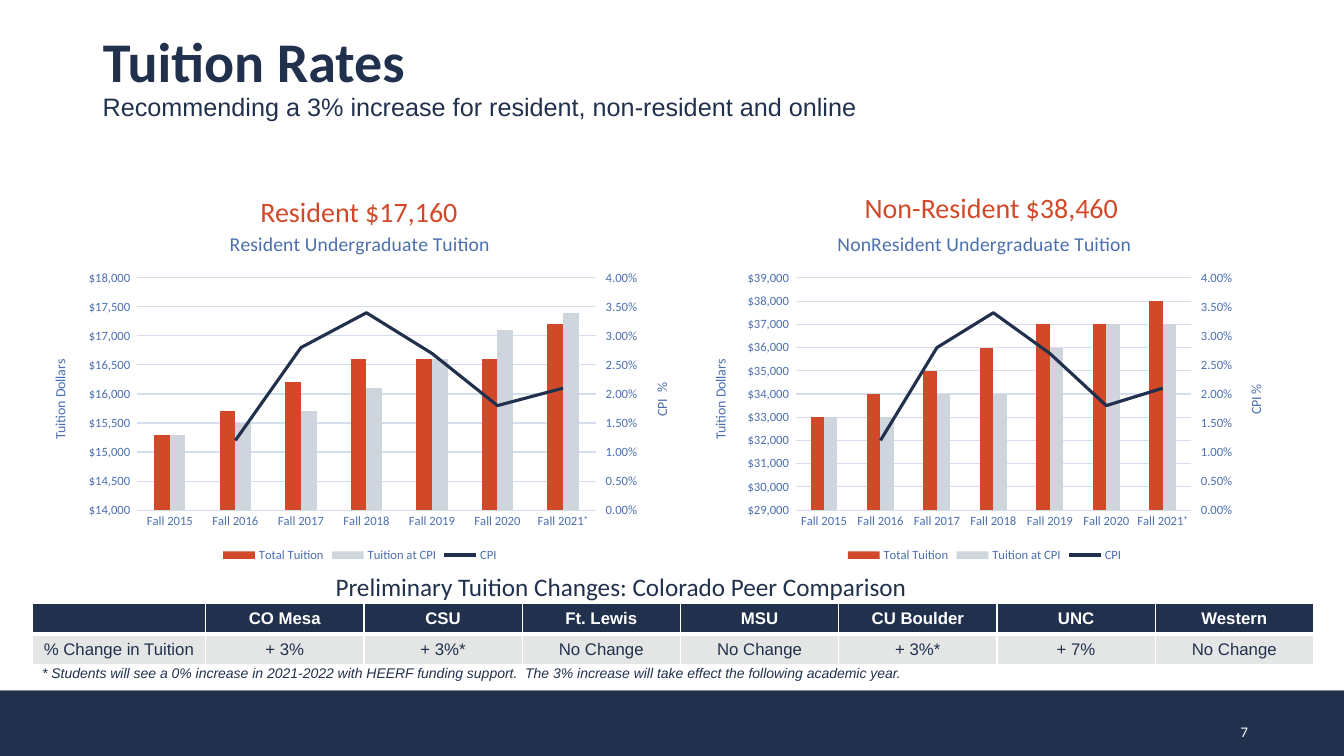
from copy import deepcopy
from dataclasses import dataclass

from pptx import Presentation
from pptx.chart.axis import ValueAxis
from pptx.chart.data import CategoryChartData
from pptx.dml.color import RGBColor
from pptx.enum.chart import XL_CHART_TYPE as ChartType, XL_LEGEND_POSITION as LegendPosition
from pptx.enum.chart import XL_MARKER_STYLE as MarkerStyle, XL_TICK_MARK as TickMark
from pptx.enum.shapes import MSO_SHAPE as ShapeKind
from pptx.enum.text import MSO_ANCHOR as Anchor, PP_ALIGN as Align
from pptx.oxml import parse_xml
from pptx.oxml.ns import nsdecls, qn
from pptx.util import Inches, Pt


@dataclass(frozen=True)
class Theme:
    navy: str = "21314D"
    orange: str = "D2492A"
    silver: str = "CED5DD"
    blue: str = "4B6FAF"
    grid: str = "D5DEED"
    row: str = "E4E5E5"
    edge: str = "848584"
    white: str = "FFFFFF"
    heading_font: str = "Calibri"
    body_font: str = "Arial"
    title: float = 40
    callout: float = 20
    subtitle: float = 18
    chart_title: float = 14
    table: float = 12
    number: float = 10.5
    small: float = 10
    tick: float = 9


THEME = Theme()
WIDTH, HEIGHT = Inches(13.33), Inches(7.5)
DOLLARS = '_("$"* #,##0_)'
TERMS = [f"Fall {year}" for year in range(2015, 2021)] + ["Fall 2021⁺"]
CPI = [None, 0.012, 0.028, 0.034, 0.027, 0.018, 0.021]
PEERS = {"": "% Change in Tuition", "CO Mesa": "+ 3%", "CSU": "+ 3%*", "Ft. Lewis": "No Change",
         "MSU": "No Change", "CU Boulder": "+ 3%*", "UNC": "+ 7%", "Western": "No Change"}


def area(left, top, width, height):
    """Turn percentages of the slide into lengths."""
    return [int(share * side / 100) for share, side in
            zip((left, top, width, height), (WIDTH, HEIGHT, WIDTH, HEIGHT))]


def color(value):
    return RGBColor.from_string(value)


def set_font(font, size, tint=THEME.navy, name=THEME.heading_font, bold=False, italic=False):
    font.size, font.name, font.bold, font.italic = Pt(size), name, bold, italic
    font.color.rgb = color(tint)


def write(frame, text, align=Align.LEFT, anchor=Anchor.TOP, spacing=1.0, **font):
    frame.word_wrap = True
    frame.vertical_anchor = anchor
    paragraph = frame.paragraphs[0]
    paragraph.alignment, paragraph.line_spacing = align, spacing
    run = paragraph.add_run()
    run.text = text
    set_font(run.font, **font)


def add_text(slide, place, text, **style):
    frame = slide.shapes.add_textbox(*area(*place)).text_frame
    write(frame, text, **style)
    return frame


def add_band(slide):
    band = slide.shapes.add_shape(ShapeKind.RECTANGLE, *area(-0.07, 91.33, 100.14, 8.8))
    band.shadow.inherit = False
    band.fill.solid()
    band.fill.fore_color.rgb = color(THEME.navy)
    band.line.color.rgb = color(THEME.edge)
    band.line.width = Pt(1)


def title_chart_part(part, text, size):
    frame = part.text_frame
    frame.text = text
    set_font(frame.paragraphs[0].runs[0].font, size, THEME.blue)


def format_value_axis(element, title, low, high, step, number_format, tick=TickMark.NONE):
    axis = ValueAxis(element)
    axis.minimum_scale, axis.maximum_scale, axis.major_unit = low, high, step
    axis.major_tick_mark, axis.minor_tick_mark = tick, TickMark.NONE
    axis.format.line.fill.background()
    axis.tick_labels.number_format = number_format
    axis.tick_labels.number_format_is_linked = False
    set_font(axis.tick_labels.font, THEME.tick, THEME.blue)
    title_chart_part(axis.axis_title, title, THEME.small)
    body = element.find(f".//{qn('c:title')}//{qn('a:bodyPr')}")
    body.set("rot", "-5400000")
    body.set("vert", "horz")
    return axis


def move_to_right_axis(plot_area):
    """Move the last column series to a line on a second pair of axes."""
    columns = plot_area.find(qn("c:barChart"))
    series = columns.findall(qn("c:ser"))[-1]
    inverted = series.find(qn("c:invertIfNegative"))
    if inverted is not None:
        series.remove(inverted)
    line_chart = parse_xml(
        f'<c:lineChart {nsdecls("c")}><c:grouping val="standard"/><c:varyColors val="0"/>'
        '<c:marker val="1"/><c:axId val="5001"/><c:axId val="5002"/></c:lineChart>')
    line_chart.insert(2, series)
    columns.addnext(line_chart)
    left = plot_area.find(qn("c:valAx"))
    right, categories = deepcopy(left), deepcopy(plot_area.find(qn("c:catAx")))
    for axis, own, other in ((categories, "5001", "5002"), (right, "5002", "5001")):
        axis.find(qn("c:axId")).set("val", own)
        axis.find(qn("c:crossAx")).set("val", other)
    categories.find(qn("c:delete")).set("val", "1")
    right.find(qn("c:axPos")).set("val", "r")
    right.find(qn("c:crosses")).set("val", "max")
    left.addnext(categories)
    categories.addnext(right)
    return left, right


def set_plot_layout(plot_area, **shares):
    for old in plot_area.findall(qn("c:layout")):
        plot_area.remove(old)
    lengths = "".join(f'<c:{key} val="{share}"/>' for key, share in shares.items())
    plot_area.insert(0, parse_xml(
        f'<c:layout {nsdecls("c")}><c:manualLayout><c:layoutTarget val="inner"/>'
        f'<c:xMode val="edge"/><c:yMode val="edge"/>{lengths}</c:manualLayout></c:layout>'))


def add_tuition_chart(slide, place, title, total, at_cpi, scale, cpi_title, plot_x, plot_width):
    data = CategoryChartData(number_format=DOLLARS)
    data.categories = TERMS
    data.add_series("Total Tuition", total)
    data.add_series("Tuition at CPI", at_cpi)
    data.add_series("CPI", CPI, number_format="0.00%")
    chart = slide.shapes.add_chart(ChartType.COLUMN_CLUSTERED, *area(*place), data).chart
    set_font(chart.font, THEME.small)
    chart.has_title = True
    title_chart_part(chart.chart_title, title, THEME.chart_title)
    chart.chart_title.include_in_layout = False
    chart.has_legend = True
    chart.legend.position = LegendPosition.BOTTOM
    chart.legend.include_in_layout = False
    set_font(chart.legend.font, THEME.tick, THEME.blue)

    # Axes
    plot_area = chart.element.find(f".//{qn('c:plotArea')}")
    chart.value_axis.has_major_gridlines = False
    left, right = move_to_right_axis(plot_area)
    set_plot_layout(plot_area, x=plot_x, y=0.18, w=plot_width, h=0.66)
    grid = format_value_axis(left, "Tuition Dollars", *scale, DOLLARS).major_gridlines.format.line
    format_value_axis(right, cpi_title, 0, 0.04, 0.005, "0.00%", TickMark.OUTSIDE)
    category_axis = chart.category_axis
    category_axis.major_tick_mark = TickMark.NONE
    set_font(category_axis.tick_labels.font, THEME.tick, THEME.blue)
    for line in (grid, category_axis.format.line):
        line.color.rgb = color(THEME.grid)
        line.width = Pt(0.75)

    # Series
    columns, cpi_plot = chart.plots
    columns.vary_by_categories = False
    columns.gap_width = 219
    for series, tint in zip(columns.series, (THEME.orange, THEME.silver)):
        series.format.fill.solid()
        series.format.fill.fore_color.rgb = color(tint)
    cpi = cpi_plot.series[0]
    cpi.smooth = False
    cpi.marker.style = MarkerStyle.NONE
    cpi.format.line.color.rgb = color(THEME.navy)
    cpi.format.line.width = Pt(2.25)


def format_cell(cell, text, fill, bottom, **font):
    cell.fill.solid()
    cell.fill.fore_color.rgb = color(fill)
    cell.margin_left = cell.margin_right = Inches(0.05)
    cell.vertical_anchor = Anchor.MIDDLE
    if text:
        write(cell.text_frame, text, align=Align.CENTER, anchor=None, size=THEME.table,
              name=THEME.body_font, **font)
    else:
        cell.margin_top = cell.margin_bottom = 0
        cell.text_frame.paragraphs[0]._p.append(
            parse_xml(f'<a:endParaRPr {nsdecls("a")} sz="{THEME.table * 100}"/>'))
    properties = cell._tc.get_or_add_tcPr()
    for index, (side, width) in enumerate((("L", 1), ("R", 1), ("T", 1), ("B", bottom))):
        properties.insert(index, parse_xml(
            f'<a:ln{side} {nsdecls("a")} w="{Pt(width)}"><a:solidFill>'
            f'<a:srgbClr val="{THEME.white}"/></a:solidFill></a:ln{side}>'))


def add_peer_table(slide):
    table = slide.shapes.add_table(2, len(PEERS), *area(2.4, 79.87, 95.27, 7.6)).table
    for index, (peer, change) in enumerate(PEERS.items()):
        table.columns[index].width = Inches(1.57 if index else 1.72)
        format_cell(table.cell(0, index), peer, THEME.navy, 3, tint=THEME.white, bold=True)
        format_cell(table.cell(1, index), change, THEME.row, 1)


def main():
    presentation = Presentation()
    presentation.slide_width, presentation.slide_height = WIDTH, HEIGHT
    slide = presentation.slides.add_slide(presentation.slide_layouts[5])
    add_band(slide)

    # Headings
    title = slide.shapes.title
    title.left, title.top, title.width, title.height = area(6.9, 3.2, 86.27, 10.67)
    write(title.text_frame, "Tuition Rates", anchor=Anchor.MIDDLE, spacing=0.9,
          size=THEME.title, bold=True)
    add_text(slide, (6.9, 11.87, 90.77, 6.67),
             "Recommending a 3% increase for resident, non-resident and online",
             spacing=0.9, size=THEME.subtitle, name=THEME.body_font)
    callout = dict(align=Align.CENTER, spacing=0.9, size=THEME.callout, tint=THEME.orange)
    resident = add_text(slide, (9.68, 25.53, 28.13, 6.67), "Resident $17,160", **callout)
    resident.margin_left = Inches(0.89)
    add_text(slide, (55.2, 25.07, 37.13, 6.67), "Non-Resident $38,460", **callout)

    # Charts
    add_tuition_chart(slide, (2.4, 28.4, 48.76, 46.53), "Resident Undergraduate Tuition",
                      [15300, 15700, 16200, 16600, 16600, 16600, 17200],
                      [15300, 15500, 15700, 16100, 16600, 17100, 17400],
                      (14000, 18000, 500), "CPI  %", 0.16, 0.7)
    add_tuition_chart(slide, (51.31, 28.4, 43.89, 46.53), "NonResident Undergraduate Tuition",
                      [33000, 34000, 35000, 36000, 37000, 37000, 38000],
                      [33000, 33000, 34000, 34000, 36000, 37000, 37000],
                      (29000, 39000, 1000), "CPI %", 0.18, 0.67)

    # Peer comparison
    add_text(slide, (24.23, 74.93, 61.9, 5.33),
             "Preliminary Tuition Changes: Colorado Peer Comparison", size=THEME.subtitle)
    add_peer_table(slide)
    add_text(slide, (2.4, 87.2, 68.8, 3.6),
             "* Students will see a 0% increase in 2021-2022 with HEERF funding support. "
             " The 3% increase will take effect the following academic year.",
             size=THEME.small, name=THEME.body_font, italic=True)

    # Slide number
    number = add_text(slide, (71.1, 92.67, 22.5, 5.33), "7", align=Align.RIGHT,
                      anchor=Anchor.BOTTOM, size=THEME.number, tint=THEME.white)
    number.margin_bottom = 0
    presentation.save("out.pptx")


if __name__ == "__main__":
    main()
